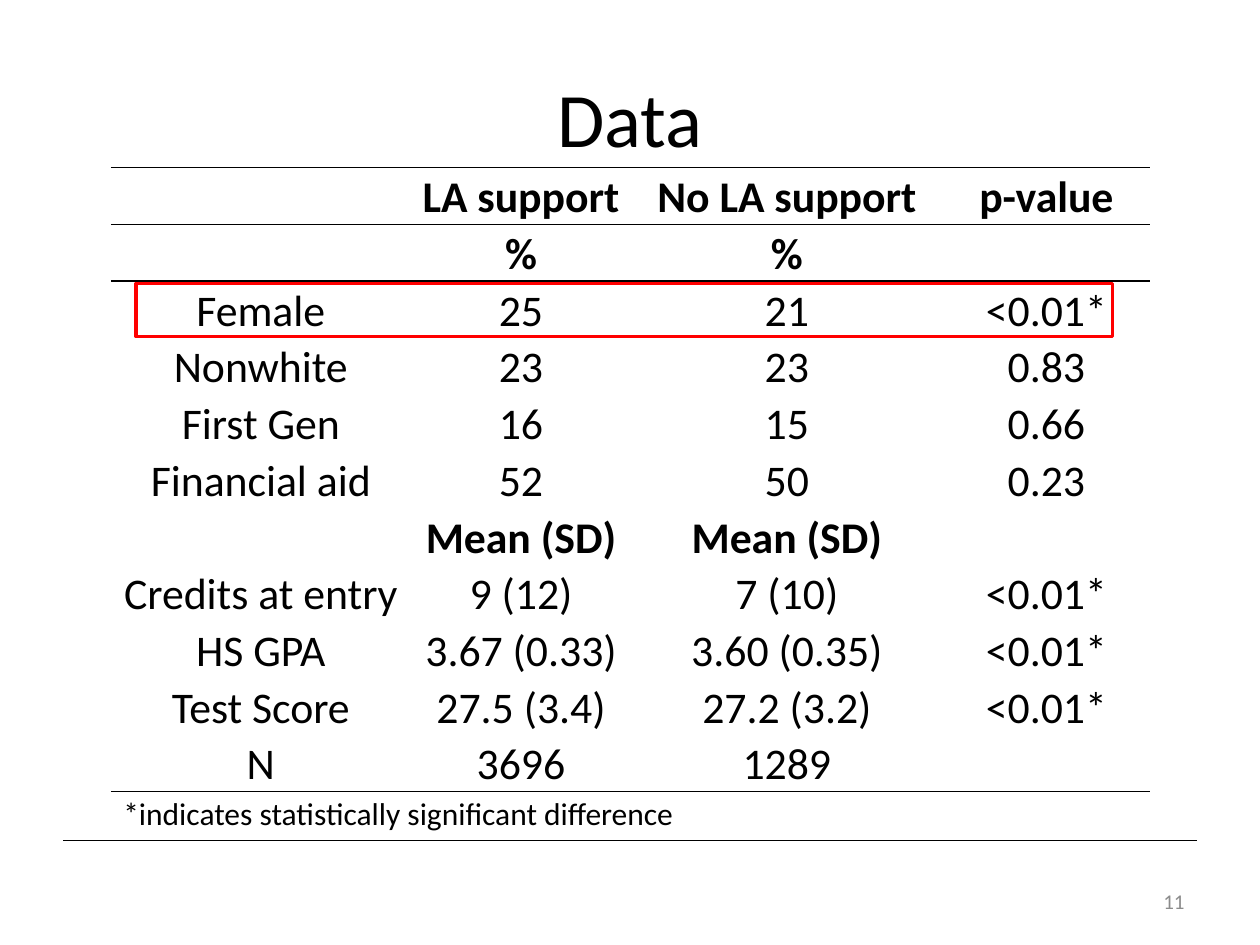
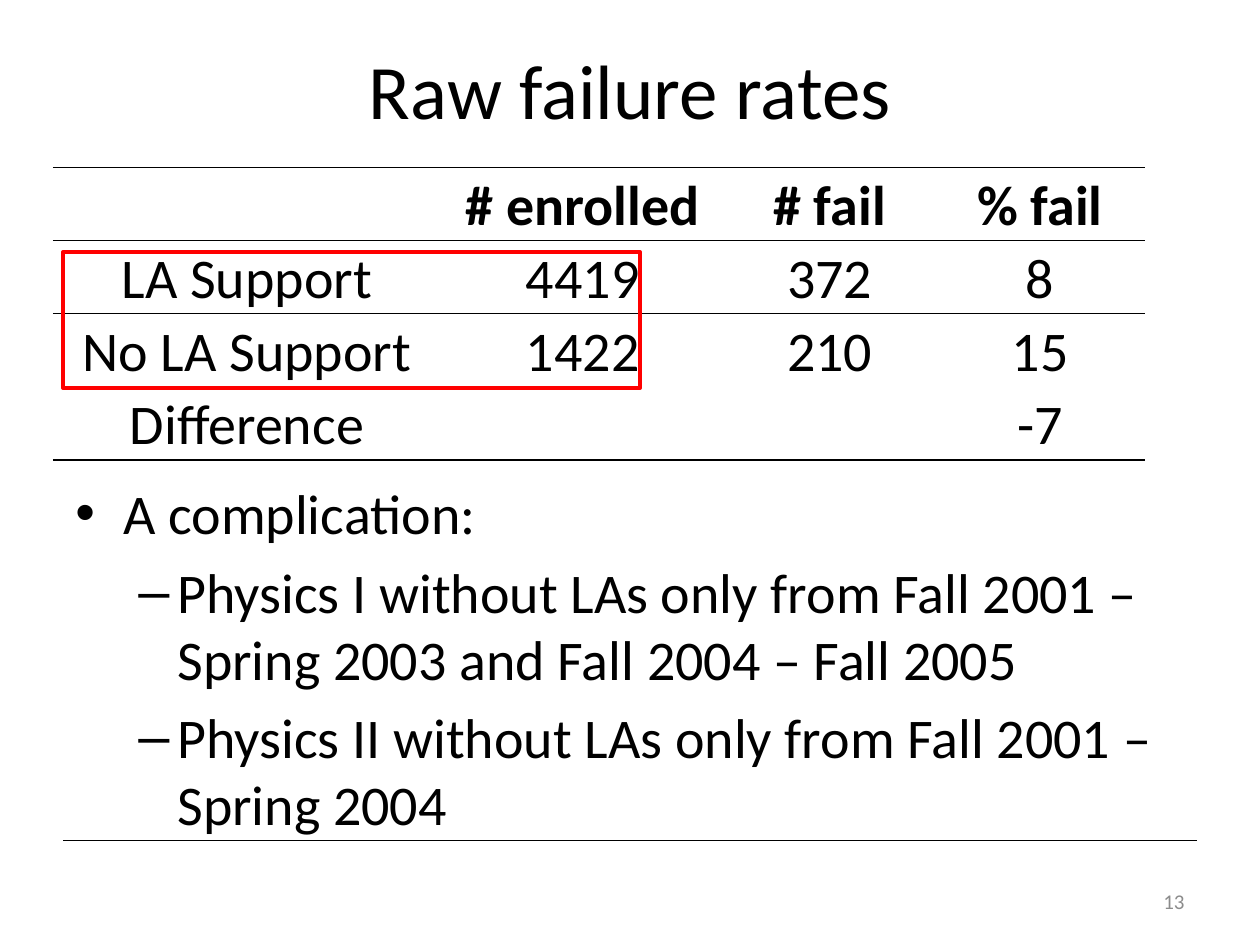
from lxml.etree import SubElement
from pptx import Presentation
from pptx.dml.color import RGBColor
from pptx.enum.shapes import MSO_CONNECTOR as Conn, MSO_SHAPE as Shape
from pptx.enum.text import MSO_ANCHOR as Anchor, PP_ALIGN as Align
from pptx.oxml.ns import qn
from pptx.util import Inches, Pt

# Shared look
FONT, BLACK, GREY, RED = "Calibri", "000000", "8C8C8C", "FF0000"
NO_STYLE = "{2D5ABB26-0587-4C30-8999-92F81FD0307C}"

# Content: bold holds the bold rows, rules the row edges that carry a line
SLIDES = [
    {
        "title": "Data", "top": 0.3, "page": "11",
        "table": {
            "at": (0.88, 1.33), "cols": (2.38, 1.75, 2.47, 1.65),
            "row": 0.45, "size": 25, "bold": (0, 1, 6), "rules": (0, 1, 2, 11),
            "rows": [
                ("", "LA support", "No LA support", "p-value"),
                ("", "%", "%", ""),
                ("Female", "25", "21", "<0.01*"),
                ("Nonwhite", "23", "23", "0.83"),
                ("First Gen", "16", "15", "0.66"),
                ("Financial aid", "52", "50", "0.23"),
                ("", "Mean (SD)", "Mean (SD)", ""),
                ("Credits at entry", "9 (12)", "7 (10)", "<0.01*"),
                ("HS GPA", "3.67 (0.33)", "3.60 (0.35)", "<0.01*"),
                ("Test Score", "27.5 (3.4)", "27.2 (3.2)", "<0.01*"),
                ("N", "3696", "1289", ""),
            ],
        },
        "frame": (1.08, 2.25, 7.75, 0.42), "weight": 2,
        "note": "*indicates statistically significant difference",
    },
    {
        "title": "Raw failure rates", "top": 0.08, "page": "13",
        "table": {
            "at": (0.42, 1.33), "cols": (3.08, 2.25, 1.67, 1.67),
            "row": 0.58, "size": 32, "bold": (0,), "rules": (0, 1, 2, 4),
            "rows": [
                ("", "# enrolled", "# fail", "% fail"),
                ("LA Support", "4419", "372", "8"),
                ("No LA Support", "1422", "210", "15"),
                ("Difference", "", "", "-7"),
            ],
        },
        "frame": (0.5, 2, 4.58, 1.08), "weight": 2.25,
        "points": [
            (0, "A complication:"),
            (1, "Physics I without LAs only from Fall 2001 – "
                "Spring 2003 and Fall 2004 – Fall 2005"),
            (1, "Physics II without LAs only from Fall 2001 – Spring 2004"),
        ],
    },
]
# Bullet sign, left margin and hanging indent for each level
LEVELS = [("•", 0.38, -0.38), ("–", 0.81, -0.31)]


def paint(code):
    return RGBColor.from_string(code)


def style(para, size, color=BLACK, bold=False, align=Align.LEFT):
    para.alignment = align
    font = para.font
    font.name, font.size, font.bold = FONT, Pt(size), bold
    font.color.rgb = paint(color)


def add_box(slide, at, anchor=Anchor.TOP):
    frame = slide.shapes.add_textbox(*map(Inches, at)).text_frame
    frame.word_wrap = True
    frame.vertical_anchor = anchor
    return frame


def add_text(slide, at, text, size, anchor=Anchor.MIDDLE, **look):
    para = add_box(slide, at, anchor).paragraphs[0]
    para.text = text
    style(para, size, **look)


def add_base(slide, data):
    """Footer rule, title and page number."""
    rule = slide.shapes.add_connector(
        Conn.STRAIGHT, Inches(0.5), Inches(6.67), Inches(9.5), Inches(6.67))
    rule.line.color.rgb = paint(BLACK)
    rule.line.width = Pt(0.5)
    SubElement(rule._element.spPr, qn("a:effectLst"))
    add_text(slide, (0.5, data["top"], 9, 1.25), data["title"], 44,
             align=Align.CENTER)
    add_text(slide, (7.17, 6.95, 2.33, 0.4), data["page"], 12,
             color=GREY, align=Align.RIGHT)


def add_edge(cell, side):
    line = SubElement(cell._tc.get_or_add_tcPr(), qn("a:" + side), w=str(Pt(1)))
    fill = SubElement(line, qn("a:solidFill"))
    SubElement(fill, qn("a:srgbClr"), val=BLACK)


def add_grid(slide, data):
    rows, cols = data["rows"], data["cols"]
    size = (sum(cols), data["row"] * len(rows))
    table = slide.shapes.add_table(
        len(rows), len(cols), *map(Inches, data["at"] + size)).table
    table.first_row = table.horz_banding = False
    table._tbl.tblPr.find(qn("a:tableStyleId")).text = NO_STYLE
    for col, width in zip(table.columns, cols):
        col.width = Inches(width)
    for r, row in enumerate(rows):
        table.rows[r].height = Inches(data["row"])
        for c, text in enumerate(row):
            cell = table.cell(r, c)
            cell.margin_left = cell.margin_right = Inches(0.07)
            cell.margin_top = cell.margin_bottom = 0
            cell.vertical_anchor = Anchor.MIDDLE
            if r == 0:
                add_edge(cell, "lnT")
            if r + 1 in data["rules"]:
                add_edge(cell, "lnB")
            cell.fill.background()
            para = cell.text_frame.paragraphs[0]
            para.text = text
            para.line_spacing = 1.07
            style(para, data["size"], bold=r in data["bold"],
                  align=Align.CENTER)


def add_frame(slide, at, weight):
    box = slide.shapes.add_shape(Shape.RECTANGLE, *map(Inches, at))
    box.shadow.inherit = False
    box.fill.background()
    box.line.color.rgb = paint(RED)
    box.line.width = Pt(weight)


def add_points(slide, points):
    frame = add_box(slide, (0.5, 3.75, 9.17, 2.62))
    for i, (level, text) in enumerate(points):
        para = frame.add_paragraph() if i else frame.paragraphs[0]
        para.text, para.level = text, level
        if i:
            para.space_before = Pt(6.4)
        sign, left, hang = LEVELS[level]
        props = para._p.get_or_add_pPr()
        props.set("marL", str(Inches(left)))
        props.set("indent", str(Inches(hang)))
        SubElement(props, qn("a:buFont"), typeface="Arial")
        SubElement(props, qn("a:buChar"), char=sign)
        style(para, 32)


def main():
    deck = Presentation()
    deck.slide_width, deck.slide_height = Inches(10), Inches(7.5)
    for data in SLIDES:
        slide = deck.slides.add_slide(deck.slide_layouts[6])
        add_base(slide, data)
        add_grid(slide, data["table"])
        if "points" in data:
            add_points(slide, data["points"])
        add_frame(slide, data["frame"], data["weight"])
        if "note" in data:
            add_text(slide, (0.88, 6.25, 8.25, 0.4), data["note"], 18,
                     anchor=Anchor.TOP)
    deck.save("out.pptx")


if __name__ == "__main__":
    main()
